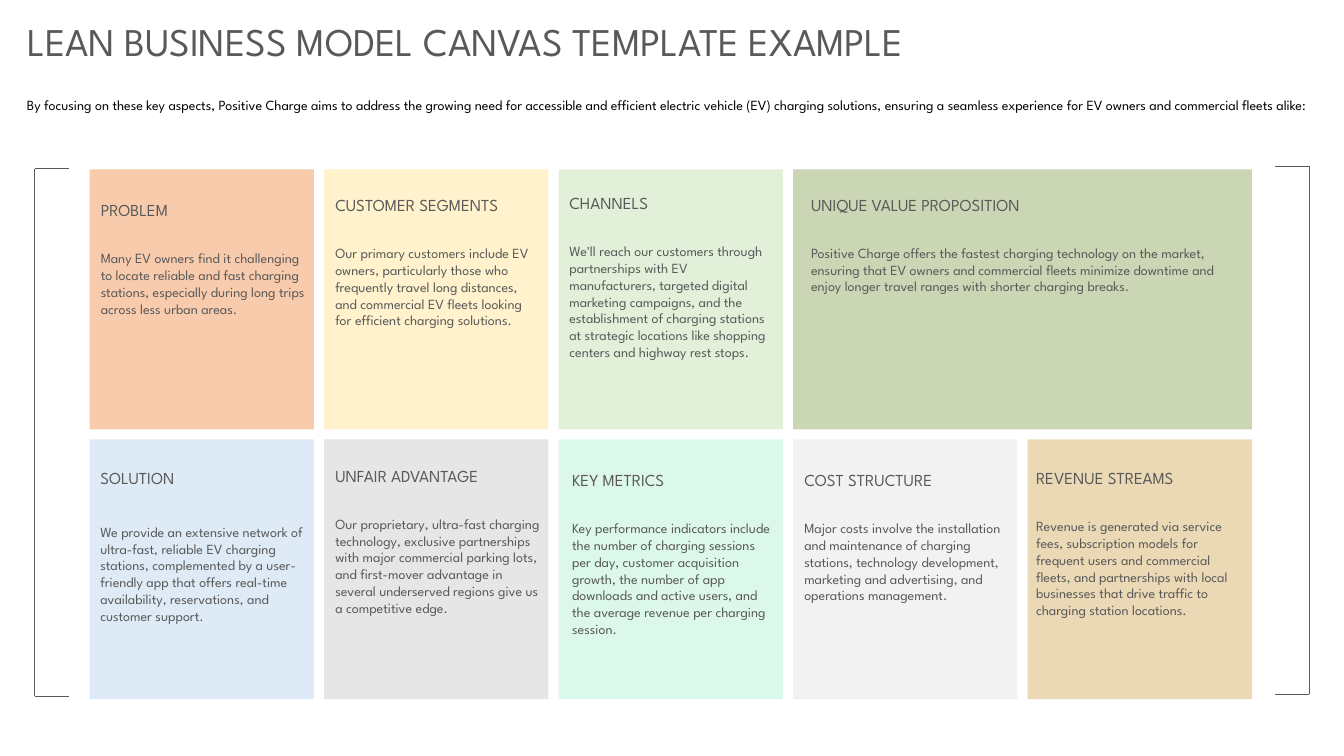
"""Build the lean business model canvas slide."""
from typing import NamedTuple

from lxml import etree
from pptx import Presentation
from pptx.dml.color import RGBColor
from pptx.enum.shapes import MSO_CONNECTOR, MSO_SHAPE
from pptx.enum.text import MSO_AUTO_SIZE
from pptx.oxml.ns import qn
from pptx.util import Cm, Pt

RECTANGLE = MSO_SHAPE.RECTANGLE
STRAIGHT = MSO_CONNECTOR.STRAIGHT
FIT_TEXT = MSO_AUTO_SIZE.SHAPE_TO_FIT_TEXT

FONT = "League Spartan"
GRAY = "595959"
BLACK = "000000"

GRID_LEFT = 2.26
COLUMN_PITCH = 5.91
ROW_TOPS = (4.27, 11.07)
CARD_WIDTH = 5.65
CARD_HEIGHT = 6.55
HEADING_HEIGHT = 0.76
BODY_GAP = 1.26


class Card(NamedTuple):
    """A canvas block with its grid place and text offsets in centimetres."""
    row: int
    column: int
    fill: str
    heading: str
    body: str
    text_indent: float
    heading_drop: float
    body_height: float
    span: int = 1
    body_gap: float = BODY_GAP


CARDS = (
    Card(0, 0, "F8CBAD", "PROBLEM",
         "Many EV owners find it challenging to locate reliable and fast charging "
         "stations, especially during long trips across less urban areas.",
         0.03, 0.64, 2.39),
    Card(0, 1, "FFF2CC", "CUSTOMER SEGMENTS",
         "Our primary customers include EV owners, particularly those who frequently "
         "travel long distances, and commercial EV fleets looking for efficient "
         "charging solutions.",
         0.03, 0.51, 3.25),
    Card(0, 2, "E2F0D9", "CHANNELS",
         "We'll reach our customers through partnerships with EV manufacturers, "
         "targeted digital marketing campaigns, and the establishment of charging "
         "stations at strategic locations like shopping centers and highway rest stops.",
         0.02, 0.46, 4.11),
    Card(0, 3, "CBD6B5", "UNIQUE VALUE PROPOSITION",
         "Positive Charge offers the fastest charging technology on the market, "
         "ensuring that EV owners and commercial fleets minimize downtime and enjoy "
         "longer travel ranges with shorter charging breaks.",
         0.2, 0.5, 1.96, span=2),
    Card(1, 0, "DEEBF7", "SOLUTION",
         "We provide an extensive network of ultra-fast, reliable EV charging stations, "
         "complemented by a user-friendly app that offers real-time availability, "
         "reservations, and customer support.",
         0.02, 0.59, 3.25, body_gap=1.4),
    Card(1, 1, "E7E6E6", "UNFAIR ADVANTAGE",
         "Our proprietary, ultra-fast charging technology, exclusive partnerships with "
         "major commercial parking lots, and first-mover advantage in several "
         "underserved regions give us a competitive edge.",
         0.03, 0.53, 3.68),
    Card(1, 2, "DCF8EB", "KEY METRICS",
         "Key performance indicators include the number of charging sessions per day, "
         "customer acquisition growth, the number of app downloads and active users, "
         "and the average revenue per charging session.",
         0.09, 0.64, 3.68),
    Card(1, 3, "F2F2F2", "COST STRUCTURE",
         "Major costs involve the installation and maintenance of charging stations, "
         "technology development, marketing and advertising, and operations management.",
         0.03, 0.64, 3.25),
    Card(1, 4, "EBD9B6", "REVENUE STREAMS",
         "Revenue is generated via service fees, subscription models for frequent users "
         "and commercial fleets, and partnerships with local businesses that drive "
         "traffic to charging station locations.",
         -0.04, 0.59, 3.25),
)


def color(hex_code):
    """Return the colour for a hex string."""
    return RGBColor.from_string(hex_code)


def add_text(slide, text, left, top, width, height, size, text_color=GRAY):
    """Add a wrapping text box that grows with its text."""
    box = slide.shapes.add_textbox(Cm(left), Cm(top), Cm(width), Cm(height))
    frame = box.text_frame
    frame.word_wrap = True
    frame.auto_size = FIT_TEXT
    frame.text = text
    font = frame.paragraphs[0].runs[0].font
    font.name = FONT
    font.size = Pt(size)
    font.color.rgb = color(text_color)


def add_card(slide, card):
    """Add a filled block with its heading and body."""
    left = GRID_LEFT + card.column * COLUMN_PITCH
    top = ROW_TOPS[card.row]
    width = CARD_WIDTH + (card.span - 1) * COLUMN_PITCH
    shape = slide.shapes.add_shape(
        RECTANGLE, Cm(left), Cm(top), Cm(width), Cm(CARD_HEIGHT))
    shape.shadow.inherit = False
    shape.fill.solid()
    shape.fill.fore_color.rgb = color(card.fill)
    shape.line.fill.background()

    text_left = left + card.text_indent
    text_width = card.span * CARD_WIDTH
    heading_top = top + card.heading_drop
    add_text(slide, card.heading, text_left, heading_top,
             text_width, HEADING_HEIGHT, 12)
    add_text(slide, card.body, text_left, heading_top + card.body_gap,
             text_width, card.body_height, 10)


def add_line(shapes, start_x, start_y, end_x, end_y):
    """Add a thin gray straight line."""
    line = shapes.add_connector(
        STRAIGHT, Cm(start_x), Cm(start_y), Cm(end_x), Cm(end_y))
    line.line.color.rgb = color(GRAY)
    line.line.width = Pt(1)
    etree.SubElement(line._element.spPr, qn("a:effectLst"))


def add_bracket(slide, spine, tip, top, bottom):
    """Add a grouped bracket made of a spine and two arms."""
    shapes = slide.shapes.add_group_shape().shapes
    for arm in (top, bottom):
        add_line(shapes, spine, arm, tip, arm)
    add_line(shapes, spine, top, spine, bottom)


def main():
    """Build and save the slide."""
    presentation = Presentation()
    presentation.slide_width = Cm(33.87)
    presentation.slide_height = Cm(19.05)
    slide = presentation.slides.add_slide(presentation.slide_layouts[6])

    add_text(slide, "LEAN BUSINESS MODEL CANVAS TEMPLATE EXAMPLE",
             0.45, 0.3, 32.9, 1.45, 28)
    add_text(slide,
             "By focusing on these key aspects, Positive Charge aims to address the "
             "growing need for accessible and efficient electric vehicle (EV) charging "
             "solutions, ensuring a seamless experience for EV owners and commercial "
             "fleets alike:",
             0.43, 2.31, 32.77, 1.12, 10, BLACK)
    for card in CARDS:
        add_card(slide, card)
    add_bracket(slide, 0.87, 1.75, 4.25, 17.55)
    add_bracket(slide, 33, 32.13, 4.19, 17.5)
    presentation.save("out.pptx")


if __name__ == "__main__":
    main()
